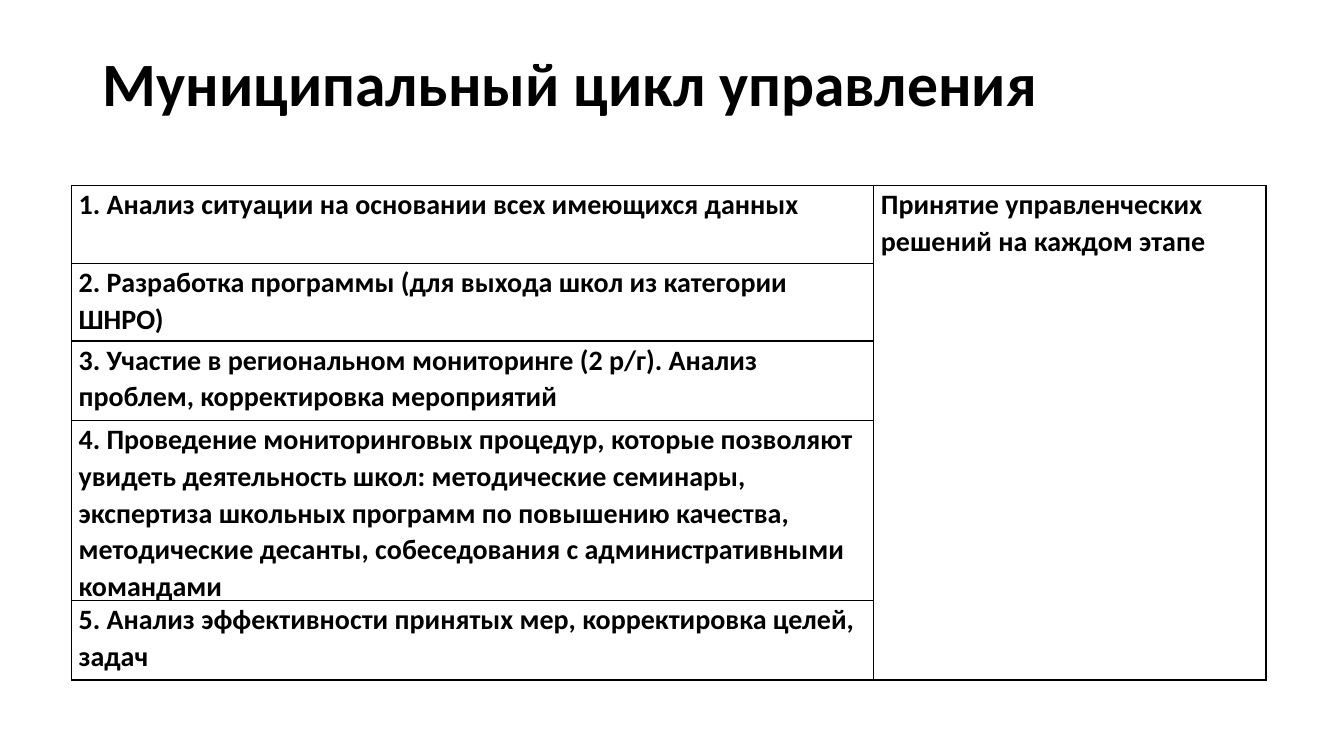
"""Build the slide on the municipal management cycle."""
from dataclasses import dataclass

from lxml import etree
from pptx import Presentation
from pptx.dml.color import RGBColor
from pptx.enum.text import MSO_ANCHOR
from pptx.oxml.ns import qn
from pptx.util import Pt

MIDDLE = MSO_ANCHOR.MIDDLE
TOP = MSO_ANCHOR.TOP


@dataclass(frozen=True)
class Theme:
    font: str = "Calibri"
    ink: str = "000000"
    title_size: int = 44
    cell_size: int = 20
    border: int = 1


theme = Theme()

STAGES = [
    ("1. Анализ ситуации на основании всех имеющихся данных", 55.44),
    ("2. Разработка программы (для выхода школ из категории ШНРО)", 55.44),
    ("3. Участие в региональном мониторинге (2 р/г). Анализ проблем, "
     "корректировка мероприятий", 56.88),
    ("4. Проведение мониторинговых процедур, которые позволяют увидеть "
     "деятельность школ: методические семинары, экспертиза школьных программ "
     "по повышению качества, методические десанты, собеседования "
     "с административными командами", 113.76),
    ("5. Анализ эффективности принятых мер, корректировка целей, задач", 56.88),
]
DECISIONS = "Принятие управленческих решений на каждом этапе"
COLUMN_WIDTHS = [573.12, 280.08]


def write_text(frame, text, size, spacing):
    frame.text = text
    para = frame.paragraphs[0]
    para.line_spacing = spacing
    for span in para.runs:
        span.font.name = theme.font
        span.font.size = Pt(size)
        span.font.bold = True
        span.font.color.rgb = RGBColor.from_string(theme.ink)


def draw_borders(cell):
    properties = cell._tc.get_or_add_tcPr()
    for position, side in enumerate(("a:lnL", "a:lnR", "a:lnT", "a:lnB")):
        line = etree.Element(qn(side), w=str(Pt(theme.border)))
        fill = etree.SubElement(line, qn("a:solidFill"))
        etree.SubElement(fill, qn("a:srgbClr"), val=theme.ink)
        properties.insert(position, line)


deck = Presentation()
deck.slide_width = Pt(960)
deck.slide_height = Pt(540)
page = deck.slides.add_slide(deck.slide_layouts[6])

title_box = page.shapes.add_textbox(Pt(66.24), Pt(28.8), Pt(828), Pt(65.52))
title_box.text_frame.word_wrap = True
title_box.text_frame.vertical_anchor = MIDDLE
write_text(title_box.text_frame, "Муниципальный цикл управления",
           theme.title_size, 0.9)

table_height = sum(height for _, height in STAGES)
table = page.shapes.add_table(
    len(STAGES), len(COLUMN_WIDTHS), Pt(51.12), Pt(132.72),
    Pt(sum(COLUMN_WIDTHS)), Pt(table_height)).table
table.first_row = False
table.horz_banding = False
for column, width in zip(table.columns, COLUMN_WIDTHS):
    column.width = Pt(width)

for row, (stage, height) in zip(table.rows, STAGES):
    row.height = Pt(height)
    for cell in row.cells:
        cell.margin_left = cell.margin_right = Pt(5.04)
        cell.margin_top = cell.margin_bottom = Pt(0)
        cell.vertical_anchor = TOP
        cell.fill.background()
        draw_borders(cell)
    write_text(row.cells[0].text_frame, stage, theme.cell_size, 1.07)

decisions_cell = table.cell(0, 1)
decisions_cell.merge(table.cell(len(STAGES) - 1, 1))
write_text(decisions_cell.text_frame, DECISIONS, theme.cell_size, 1.07)

deck.save("out.pptx")
